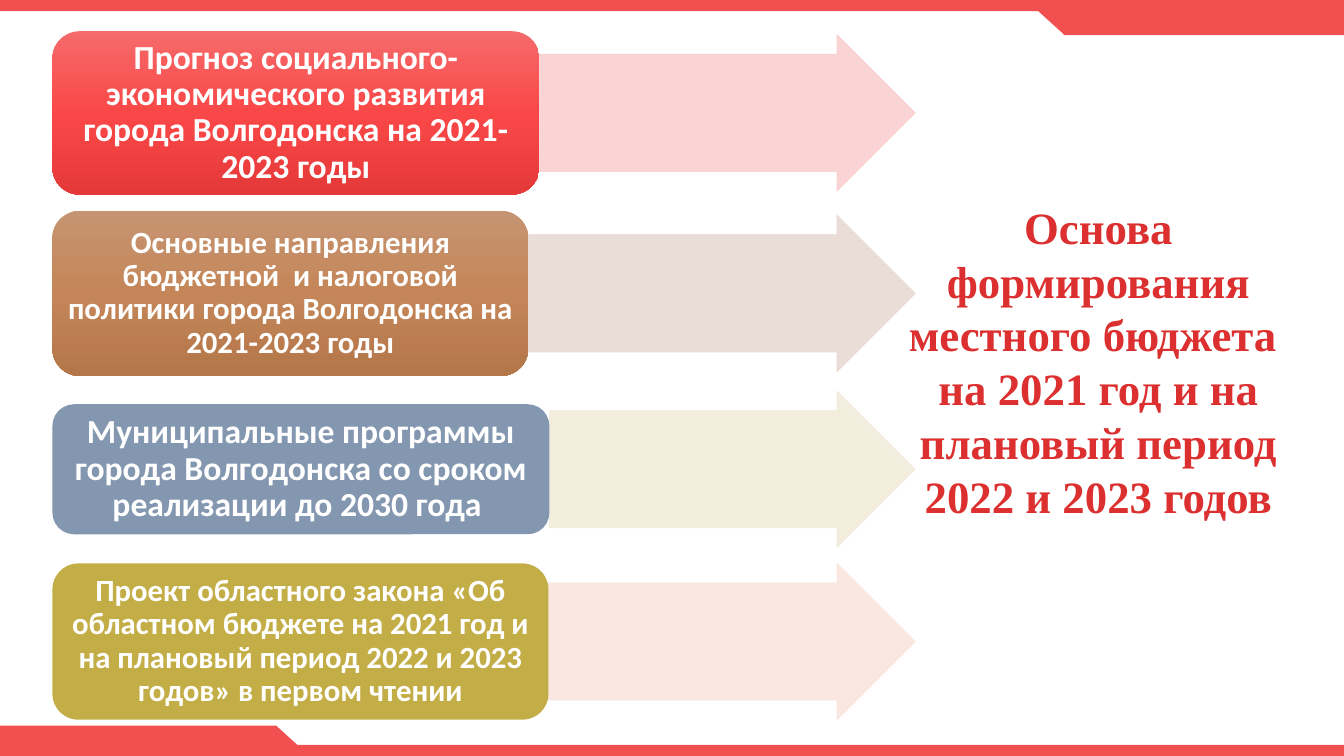
from copy import deepcopy
from dataclasses import dataclass

from lxml.etree import SubElement
from pptx import Presentation
from pptx.dml.color import RGBColor
from pptx.enum.shapes import MSO_SHAPE
from pptx.enum.text import MSO_ANCHOR, PP_ALIGN
from pptx.oxml.ns import qn
from pptx.util import Inches, Pt


@dataclass(frozen=True)
class Theme:
    band: str = "F25050"
    title: str = "DC2F2F"
    box_text: str = "FFFFFF"
    body_font: str = "Calibri"
    title_font: str = "Times New Roman"
    large: int = 24
    medium: int = 22
    title_size: int = 32
    arrow_opacity: int = 90
    # One entry per row: box fill (several colours make a gradient), arrow fill
    rows: tuple = (
        (("F56A6A", "FA4848", "E53939"), "FAD0D0"),
        (("C69472", "C48658", "B47749"), "E8D9D2"),
        (("8497B0",), "F1ECDA"),
        (("C3AD46",), "FAE5DF"),
    )


THEME = Theme()
WIDTH, HEIGHT = Inches(13.33), Inches(7.5)

# All places are percentages of the slide's width and height
BOX_LEFT = 3.9
ARROW_TIP = 68.1
ARROW_HEIGHT = 20.67

# Text, type size, top, width and height of each box
SOURCES = (
    ("Прогноз социального-экономического развития города Волгодонска на 2021-2023 годы",
     THEME.large, 4.13, 36.23, 21.6),
    ("Основные направления бюджетной  и налоговой политики города Волгодонска на 2021-2023 годы",
     THEME.medium, 27.87, 35.41, 21.87),
    ("Муниципальные программы города Волгодонска со сроком реализации до 2030 года ",
     THEME.large, 53.47, 36.98, 17.2),
    ("Проект областного закона «Об областном бюджете на 2021 год и на плановый период "
     "2022 и 2023 годов» в первом чтении",
     THEME.medium, 74.53, 36.91, 20.67),
)
RESULT = ("Основа формирования местного бюджета ",
          "на 2021 год и на плановый период 2022 и 2023 годов")


def area(left, top, width, height):
    """Turn percentages of the slide into lengths."""
    return (int(WIDTH * left / 100), int(HEIGHT * top / 100),
            int(WIDTH * width / 100), int(HEIGHT * height / 100))


def add_block(page, kind, place, colors):
    """Add a preset shape with a plain fill or a downward gradient."""
    shape = page.shapes.add_shape(kind, *area(*place))
    shape.shadow.inherit = False
    shape.line.fill.background()
    if len(colors) == 1:
        shape.fill.solid()
        shape.fill.fore_color.rgb = RGBColor.from_string(colors[0])
    else:
        fill_gradient(shape, colors)
    return shape


def fill_gradient(shape, colors):
    shape.fill.gradient()
    shape.fill.gradient_angle = 270
    stop_list = shape._element.spPr.find(".//" + qn("a:gsLst"))
    while len(stop_list) < len(colors):
        stop_list.append(deepcopy(stop_list[0]))
    for index, (stop, color) in enumerate(zip(shape.fill.gradient_stops, colors)):
        stop.position = index / (len(colors) - 1)
        stop.color.rgb = RGBColor.from_string(color)


def write(shape, *texts, font, size, color, spacing=1.0, inset=0.1):
    """Write centred bold paragraphs into a shape."""
    frame = shape.text_frame
    frame.word_wrap = True
    frame.margin_left = frame.margin_right = Inches(inset)
    for index, text in enumerate(texts):
        para = frame.add_paragraph() if index else frame.paragraphs[0]
        para.alignment = PP_ALIGN.CENTER
        para.line_spacing = spacing
        span = para.add_run()
        span.text = text
        span.font.name, span.font.size, span.font.bold = font, Pt(size), True
        span.font.color.rgb = RGBColor.from_string(color)


def add_arrow(page, left, middle, color):
    """Add a translucent arrow from left to the common tip line."""
    place = (left, middle - ARROW_HEIGHT / 2, ARROW_TIP - left, ARROW_HEIGHT)
    arrow = add_block(page, MSO_SHAPE.RIGHT_ARROW, place, (color,))
    arrow.adjustments[0], arrow.adjustments[1] = 0.75, 0.5
    arrow.line.color.rgb = RGBColor.from_string(color)
    arrow.line.width = Pt(0.5)
    for tone in arrow._element.spPr.iter(qn("a:srgbClr")):
        SubElement(tone, qn("a:alpha"), val=str(THEME.arrow_opacity * 1000))


def add_source(page, text, size, top, width, height, colors, arrow_color):
    """Add one row: an arrow and the rounded box it starts from."""
    add_arrow(page, BOX_LEFT + width, top + height / 2, arrow_color)
    box = add_block(page, MSO_SHAPE.ROUNDED_RECTANGLE,
                    (BOX_LEFT, top, width, height), colors)
    box.text_frame.vertical_anchor = MSO_ANCHOR.MIDDLE
    write(box, text, font=THEME.body_font, size=size, color=THEME.box_text,
          spacing=0.9, inset=0.02)


def add_band(page, edge_top, tab, slant, turn):
    """Add an edge strip with its thicker, slanted tab."""
    colors = (THEME.band,)
    add_block(page, MSO_SHAPE.RECTANGLE, (0, edge_top, 100, 1.47), colors)
    add_block(page, MSO_SHAPE.RECTANGLE, tab, colors)
    add_block(page, MSO_SHAPE.FLOWCHART_MERGE, slant, colors).rotation = turn


def main():
    deck = Presentation()
    deck.slide_width, deck.slide_height = WIDTH, HEIGHT
    page = deck.slides.add_slide(deck.slide_layouts[6])

    # Top and bottom bands
    add_band(page, 0, (79.14, 0.67, 20.86, 4), (76.67, 0.53, 4.95, 4), 0)
    add_band(page, 98.53, (0, 96, 20.56, 4), (18.08, 96, 4.95, 4), 180)

    # Sources of the budget
    for source, (colors, arrow_color) in zip(SOURCES, THEME.rows):
        add_source(page, *source, colors, arrow_color)

    # Result they lead to
    result = page.shapes.add_textbox(*area(64.44, 25.73, 34.58, 44.4))
    write(result, *RESULT, font=THEME.title_font, size=THEME.title_size,
          color=THEME.title)

    deck.save("out.pptx")


if __name__ == "__main__":
    main()
